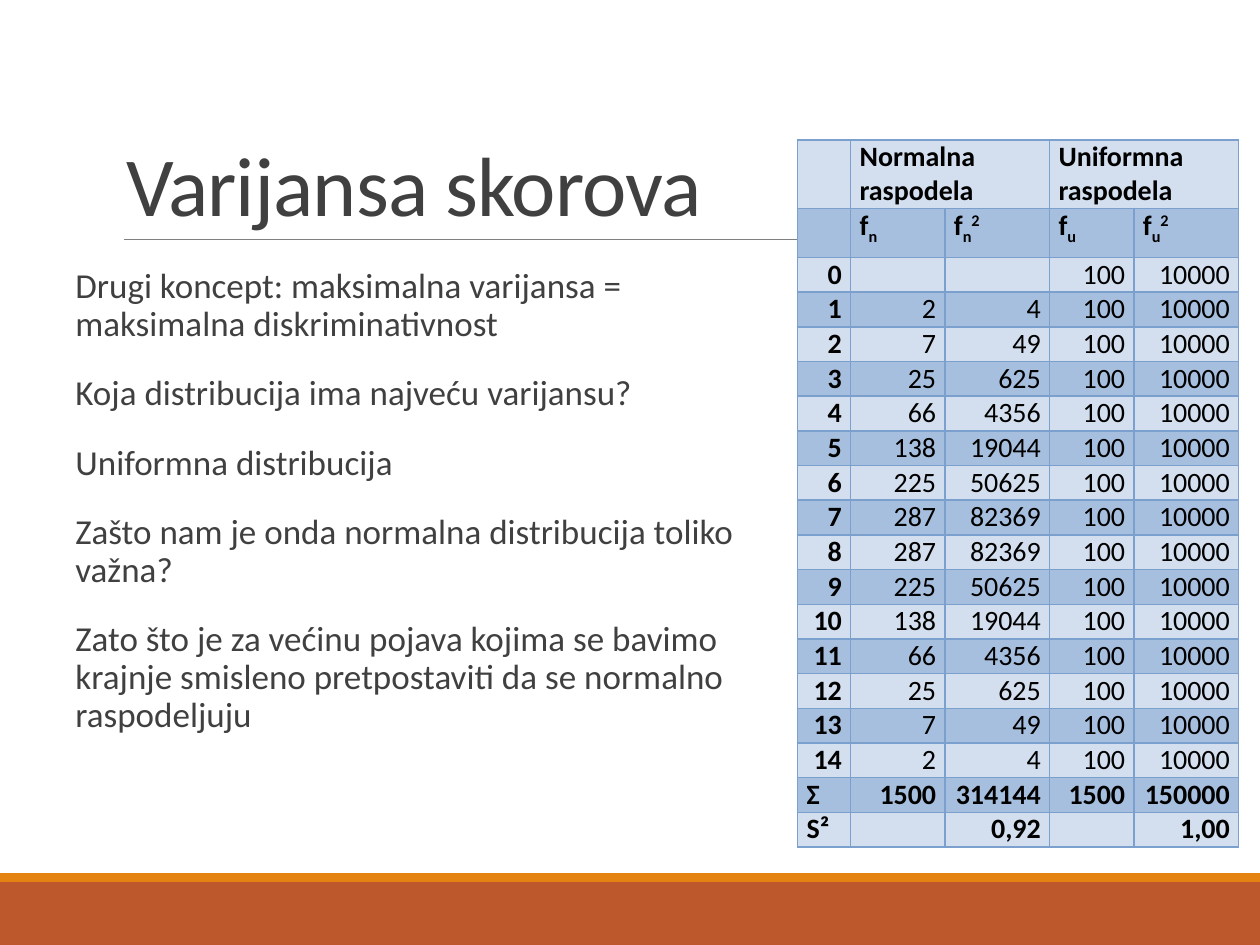
"""Build the slide on the variance of scores under normal and uniform distributions."""
from dataclasses import dataclass

from lxml.etree import SubElement
from pptx import Presentation
from pptx.dml.color import RGBColor
from pptx.enum.shapes import MSO_CONNECTOR, MSO_SHAPE
from pptx.enum.text import MSO_ANCHOR, MSO_AUTO_SIZE, PP_ALIGN
from pptx.oxml.ns import qn
from pptx.util import Cm, Pt

FONT = "Calibri"
INK, BLACK, RULE_GRAY = "404040", "000000", "808080"
RUST, ORANGE = "BD582C", "E48312"
BANDS = ("D3DFEE", "A7BFDE")
BORDER = "7BA0CD"
TABLE_SIZE = 16
SUBSCRIPT, SUPERSCRIPT = -25, 30

COLUMN_WIDTHS = (1.07, 1.9, 2.11, 1.7, 2.11)
HEADER_HEIGHTS = (1.35, 0.99)
SCORE_HEIGHT = 0.7

RISING_FREQUENCIES = (2, 7, 25, 66, 138, 225, 287)
NORMAL = (0, *RISING_FREQUENCIES, *reversed(RISING_FREQUENCIES))
UNIFORM = (100,) * len(NORMAL)

QUESTIONS = (
    "Drugi koncept: maksimalna varijansa = maksimalna diskriminativnost",
    "Koja distribucija ima najveću varijansu?",
    "Uniformna distribucija",
    "Zašto nam je onda normalna distribucija toliko važna?",
    "Zato što je za većinu pojava kojima se bavimo krajnje smisleno "
    "pretpostaviti da se normalno raspodeljuju",
)


@dataclass(frozen=True)
class Band:
    top: float
    height: float
    color: str


@dataclass(frozen=True)
class Piece:
    text: str
    baseline: int = 0


@dataclass(frozen=True)
class Entry:
    pieces: tuple[Piece, ...] = ()
    bold: bool = True
    align: PP_ALIGN = PP_ALIGN.LEFT


FOOTER_BANDS = (Band(17.78, 1.27, RUST), Band(17.6, 0.18, ORANGE))


def rgb(color: str) -> RGBColor:
    return RGBColor.from_string(color)


def add_run(paragraph, text: str, size: float, color: str, bold: bool = False):
    run = paragraph.add_run()
    run.text = text
    run.font.name = FONT
    run.font.size = Pt(size)
    run.font.bold = bold
    run.font.color.rgb = rgb(color)
    return run


def place(placeholder, left: float, top: float, width: float, height: float):
    placeholder.left, placeholder.top = Cm(left), Cm(top)
    placeholder.width, placeholder.height = Cm(width), Cm(height)
    frame = placeholder.text_frame
    frame.word_wrap = True
    frame.auto_size = MSO_AUTO_SIZE.NONE
    return frame


def write_title(title) -> None:
    frame = place(title, 2.29, 0.79, 20.95, 4.04)
    frame.vertical_anchor = MSO_ANCHOR.BOTTOM
    heading = frame.paragraphs[0]
    heading.alignment = PP_ALIGN.LEFT
    heading.line_spacing = 0.85
    run = add_run(heading, "Varijansa skorova", 48, INK)
    run._r.get_or_add_rPr().set("spc", "-50")


def write_questions(body) -> None:
    frame = place(body, 1.27, 5.28, 13.97, 11.73)
    frame.vertical_anchor = MSO_ANCHOR.TOP
    frame.margin_left = frame.margin_right = 0
    frame.margin_top = frame.margin_bottom = Cm(0.13)
    for index, question in enumerate(QUESTIONS):
        paragraph = frame.add_paragraph() if index else frame.paragraphs[0]
        paragraph.line_spacing = 0.9
        paragraph.space_before, paragraph.space_after = Pt(12), Pt(6)
        properties = paragraph._p.get_or_add_pPr()
        properties.set("marL", str(Cm(0.25)))
        properties.set("indent", str(-Cm(0.25)))
        bullet_color = SubElement(properties, qn("a:buClr"))
        SubElement(bullet_color, qn("a:srgbClr"), val=ORANGE)
        SubElement(properties, qn("a:buChar"), char=" ")
        add_run(paragraph, question, 20, INK)


def add_band(shapes, band: Band, width: int) -> None:
    bar = shapes.add_shape(MSO_SHAPE.RECTANGLE, 0, Cm(band.top), width, Cm(band.height))
    bar.shadow.inherit = False
    bar.fill.solid()
    bar.fill.fore_color.rgb = rgb(band.color)
    bar.line.fill.background()


def add_title_rule(shapes) -> None:
    rule = shapes.add_connector(MSO_CONNECTOR.STRAIGHT, Cm(2.49), Cm(4.83), Cm(23.24), Cm(4.83))
    rule.line.color.rgb = rgb(RULE_GRAY)
    rule.line.width = Pt(0.5)
    SubElement(rule._element.spPr, qn("a:effectLst"))


def label(*pieces: Piece) -> Entry:
    return Entry(pieces)


def number(value: int | str, bold: bool = False) -> Entry:
    return Entry((Piece(str(value)),) if value else (), bold, PP_ALIGN.RIGHT)


def frequency_labels(letter: str) -> list[Entry]:
    base = (Piece("f"), Piece(letter, SUBSCRIPT))
    return [label(*base), label(*base, Piece("2", SUPERSCRIPT))]


def score_rows() -> list[list[Entry]]:
    return [
        [number(str(score), True), *map(number, (normal, normal**2, uniform, uniform**2))]
        for score, (normal, uniform) in enumerate(zip(NORMAL, UNIFORM))
    ]


def table_rows() -> list[list[Entry]]:
    blank = Entry()
    totals = [
        sum(value**power for value in frequencies)
        for frequencies in (NORMAL, UNIFORM)
        for power in (1, 2)
    ]
    return [
        [blank, label(Piece("Normalna raspodela")), blank,
         label(Piece("Uniformna raspodela")), blank],
        [blank, *frequency_labels("n"), *frequency_labels("u")],
        *score_rows(),
        [label(Piece("Σ")), *(number(total, True) for total in totals)],
        [label(Piece("S²")), blank, number("0,92", True), blank, number("1,00", True)],
    ]


def format_cell(cell, entry: Entry, fill: str) -> None:
    cell.margin_left = cell.margin_right = Cm(0.18)
    cell.margin_top = cell.margin_bottom = 0
    properties = cell._tc.get_or_add_tcPr()
    for side in ("lnL", "lnR", "lnT", "lnB"):
        edge = SubElement(properties, qn(f"a:{side}"), w=str(Pt(1)))
        SubElement(SubElement(edge, qn("a:solidFill")), qn("a:srgbClr"), val=BORDER)
    cell.fill.solid()
    cell.fill.fore_color.rgb = rgb(fill)
    paragraph = cell.text_frame.paragraphs[0]
    paragraph.alignment = entry.align
    for piece in entry.pieces:
        run = add_run(paragraph, piece.text, TABLE_SIZE, BLACK, entry.bold)
        if piece.baseline:
            run._r.get_or_add_rPr().set("baseline", str(piece.baseline * 1000))
    if not entry.pieces:
        SubElement(paragraph._p, qn("a:endParaRPr"), sz=str(TABLE_SIZE * 100))


def add_distribution_table(shapes) -> None:
    rows = table_rows()
    heights = (*HEADER_HEIGHTS, *(SCORE_HEIGHT for _ in rows[len(HEADER_HEIGHTS):]))
    table = shapes.add_table(
        len(rows), len(COLUMN_WIDTHS), Cm(16.08), Cm(2.82),
        Cm(sum(COLUMN_WIDTHS)), Cm(sum(heights)),
    ).table
    table.first_row = table.horz_banding = False
    for column, width in zip(table.columns, COLUMN_WIDTHS):
        column.width = Cm(width)
    for row_index, (entries, height) in enumerate(zip(rows, heights)):
        table.rows[row_index].height = Cm(height)
        for column_index, entry in enumerate(entries):
            format_cell(table.cell(row_index, column_index), entry, BANDS[row_index % 2])
    for first in (1, 3):
        table.cell(0, first).merge(table.cell(0, first + 1))


def main() -> None:
    presentation = Presentation()
    presentation.slide_width, presentation.slide_height = Cm(25.4), Cm(19.05)
    slide = presentation.slides.add_slide(presentation.slide_layouts[1])
    for band in FOOTER_BANDS:
        add_band(slide.shapes, band, presentation.slide_width)
    add_title_rule(slide.shapes)
    write_title(slide.shapes.title)
    write_questions(slide.placeholders[1])
    add_distribution_table(slide.shapes)
    presentation.save("out.pptx")


if __name__ == "__main__":
    main()
